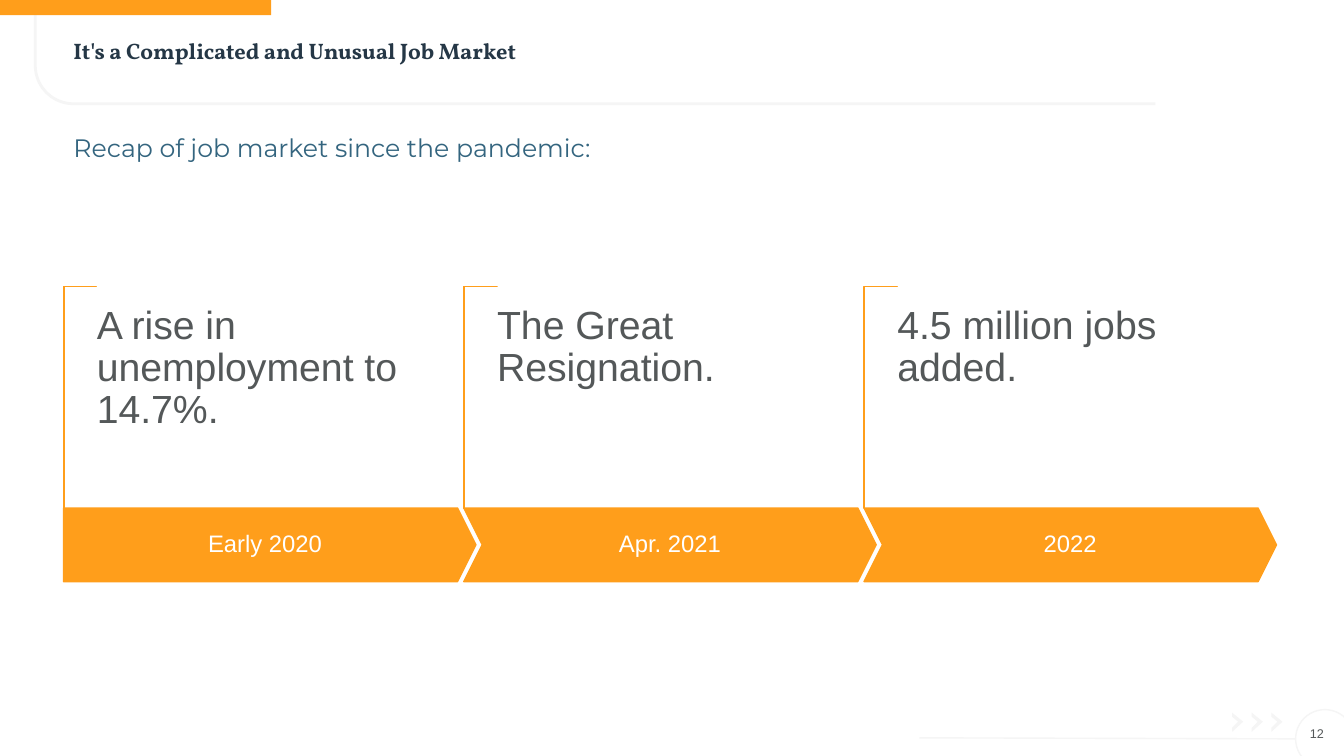
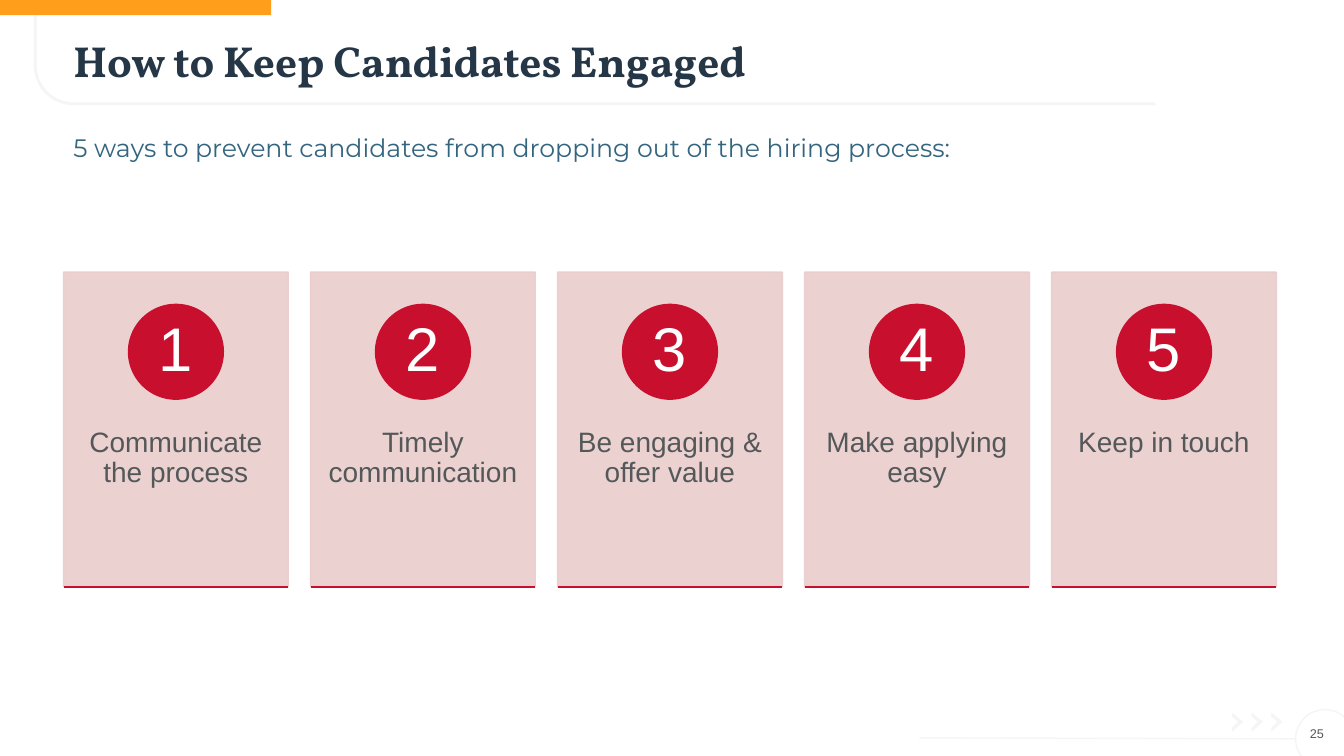
from math import cos, pi, sin

from lxml.etree import SubElement
from pptx import Presentation
from pptx.dml.color import RGBColor
from pptx.enum.shapes import MSO_CONNECTOR, MSO_SHAPE
from pptx.enum.text import MSO_ANCHOR, PP_ALIGN
from pptx.oxml.ns import qn
from pptx.util import Inches, Pt

ORANGE, RED, PINK, WHITE = "FF9E1B", "C8102E", "EBCCCD", "FFFFFF"
NAVY, TEAL, GREY, PALE = "253746", "34657F", "545859", "F5F5F5"
LEFT = 0.63


def color(value):
    return RGBColor.from_string(value)


def write(shape, text, *, size, ink, font="Arial", bold=False, align=PP_ALIGN.LEFT,
          anchor=MSO_ANCHOR.TOP, insets=(0.1, 0.05, 0.1, 0.05), spacing=0.9):
    """Put one formatted paragraph into a shape; insets run left, top, right, bottom."""
    frame = shape.text_frame
    frame.word_wrap = True
    frame.vertical_anchor = anchor
    (frame.margin_left, frame.margin_top,
     frame.margin_right, frame.margin_bottom) = map(Inches, insets)
    paragraph = frame.paragraphs[0]
    paragraph.alignment = align
    paragraph.line_spacing = spacing
    run = paragraph.add_run()
    run.text = text
    run.font.name, run.font.size, run.font.bold = font, Pt(size), bold
    run.font.color.rgb = color(ink)


class Deck:
    def __init__(self):
        self.presentation = Presentation()
        self.presentation.slide_width = Inches(13.33)
        self.presentation.slide_height = Inches(7.5)
        self.slide = None

    # Basic elements
    def paint(self, shape, fill=None, line=None, width=1, opacity=100):
        shape.shadow.inherit = False
        if fill:
            shape.fill.solid()
            shape.fill.fore_color.rgb = color(fill)
        else:
            shape.fill.background()
        if line:
            shape.line.color.rgb = color(line)
            shape.line.width = Pt(width)
        else:
            shape.line.fill.background()
        if opacity < 100:
            for tint in shape.element.spPr.iter(qn("a:srgbClr")):
                SubElement(tint, qn("a:alpha"), val=str(opacity * 1000))
        return shape

    def shape(self, kind, left, top, width, height, **style):
        shape = self.slide.shapes.add_shape(
            kind, Inches(left), Inches(top), Inches(width), Inches(height))
        return self.paint(shape, **style)

    def outline(self, points, close=True, **style):
        start, *others = [(Inches(x), Inches(y)) for x, y in points]
        builder = self.slide.shapes.build_freeform(*start)
        builder.add_line_segments(others, close=close)
        return self.paint(builder.convert_to_shape(), **style)

    def line(self, x1, y1, x2, y2, ink, width=1):
        connector = self.slide.shapes.add_connector(
            MSO_CONNECTOR.STRAIGHT, Inches(x1), Inches(y1), Inches(x2), Inches(y2))
        connector.line.color.rgb = color(ink)
        connector.line.width = Pt(width)
        SubElement(connector.element.spPr, qn("a:effectLst"))

    def text(self, left, top, width, height, text, **style):
        box = self.slide.shapes.add_textbox(
            Inches(left), Inches(top), Inches(width), Inches(height))
        write(box, text, **style)

    # Shared frame of every slide
    def new_slide(self, title, title_size, subtitle, number):
        self.slide = self.presentation.slides.add_slide(self.presentation.slide_layouts[6])
        self.header_frame()
        self.footer(number)
        self.text(LEFT, 1.3, 12.04, 0.52, subtitle, size=18, ink=TEAL, font="Montserrat")
        self.text(LEFT, 0.35, 9.83, 0.61, title, size=title_size, ink=NAVY,
                  font="Vollkorn", bold=True)

    def header_frame(self):
        radius, steps = 0.38, 24
        angles = [step * pi / 2 / steps for step in range(steps + 1)]
        corner = [(0.35 + radius * (1 - cos(angle)), 0.65 + radius * sin(angle))
                  for angle in angles]
        self.outline([(0.35, 0), *corner, (11.46, 1.03)], close=False, line=PALE, width=2)
        self.shape(MSO_SHAPE.RECTANGLE, 0, 0, 2.69, 0.15, fill=ORANGE)

    def footer(self, number):
        self.shape(MSO_SHAPE.OVAL, 12.85, 7.04, 0.58, 0.58, line=PALE)
        arrow = [(0, 0.04), (0.06, 0.09), (0, 0.15), (0, 0.19), (0.11, 0.09), (0, 0)]
        for index in range(3):
            left = 12.22 + index * 0.195
            self.outline([(left + x, 7.07 + y) for x, y in arrow], fill=PALE)
        self.line(9.12, 7.32, 12.85, 7.33, PALE)
        self.text(12.77, 7.08, 0.46, 0.4, str(number), size=9, ink=GREY,
                  align=PP_ALIGN.RIGHT, anchor=MSO_ANCHOR.MIDDLE, spacing=1.0)

    # Timeline step: bracket, arrow with date, statement
    def timeline_step(self, left, kind, date, statement):
        length, depth, bottom = 2.2, 0.33, 5.04
        bracket = self.shape(MSO_SHAPE.CORNER, left + (depth - length) / 2,
                             bottom - (length + depth) / 2, length, depth,
                             fill=WHITE, line=ORANGE)
        bracket.rotation = 90
        bracket.adjustments[0] = bracket.adjustments[1] = 0.01
        arrow = self.shape(kind, left, bottom, 4.09, 0.73, fill=ORANGE, line=ORANGE)
        arrow.adjustments[0] = 0.25
        write(arrow, date, size=17, ink=WHITE, align=PP_ALIGN.CENTER,
              anchor=MSO_ANCHOR.MIDDLE, insets=(0.12, 0.24, 0.12, 0.24))
        self.text(left + depth, 3.03, 3.32, 1.43, statement, size=28, ink=GREY,
                  insets=(0, 0, 0, 0))

    # Numbered card: panel with text, number disc, base line
    def numbered_card(self, left, number, text):
        top, width, height, disc = 2.7, 2.23, 3.12, 0.94
        panel = self.shape(MSO_SHAPE.RECTANGLE, left, top, width, height,
                           fill=PINK, line=PINK, opacity=90)
        write(panel, text, size=20, ink=GREY, align=PP_ALIGN.CENTER,
              insets=(0.17, 1.55, 0.17, 0.42))
        circle = self.shape(MSO_SHAPE.OVAL, left + (width - disc) / 2, top + 0.32,
                            disc, disc, fill=RED, line=RED)
        write(circle, str(number), size=44, ink=WHITE, align=PP_ALIGN.CENTER,
              anchor=MSO_ANCHOR.MIDDLE, insets=(0.07, 0.01, 0.07, 0.01))
        self.line(left, top + height, left + width, top + height, RED, width=1.5)


def main():
    deck = Deck()

    # Job market timeline
    deck.new_slide("It's a Complicated and Unusual Job Market", 16,
                   "Recap of job market since the pandemic:", 12)
    steps = [
        (MSO_SHAPE.PENTAGON, "Early 2020", "A rise in unemployment to 14.7%."),
        (MSO_SHAPE.CHEVRON, "Apr. 2021", "The Great Resignation."),
        (MSO_SHAPE.CHEVRON, "2022", "4.5 million jobs added."),
    ]
    for index, step in enumerate(steps):
        deck.timeline_step(LEFT + index * 3.97, *step)

    # Five ways to keep candidates
    deck.new_slide("How to Keep Candidates Engaged", 31,
                   "5 ways to prevent candidates from dropping out of the hiring process:", 25)
    ways = ["Communicate the process", "Timely communication", "Be engaging & offer value",
            "Make applying easy", "Keep in touch"]
    for index, way in enumerate(ways):
        deck.numbered_card(LEFT + index * 2.45, index + 1, way)

    deck.presentation.save("out.pptx")


if __name__ == "__main__":
    main()
